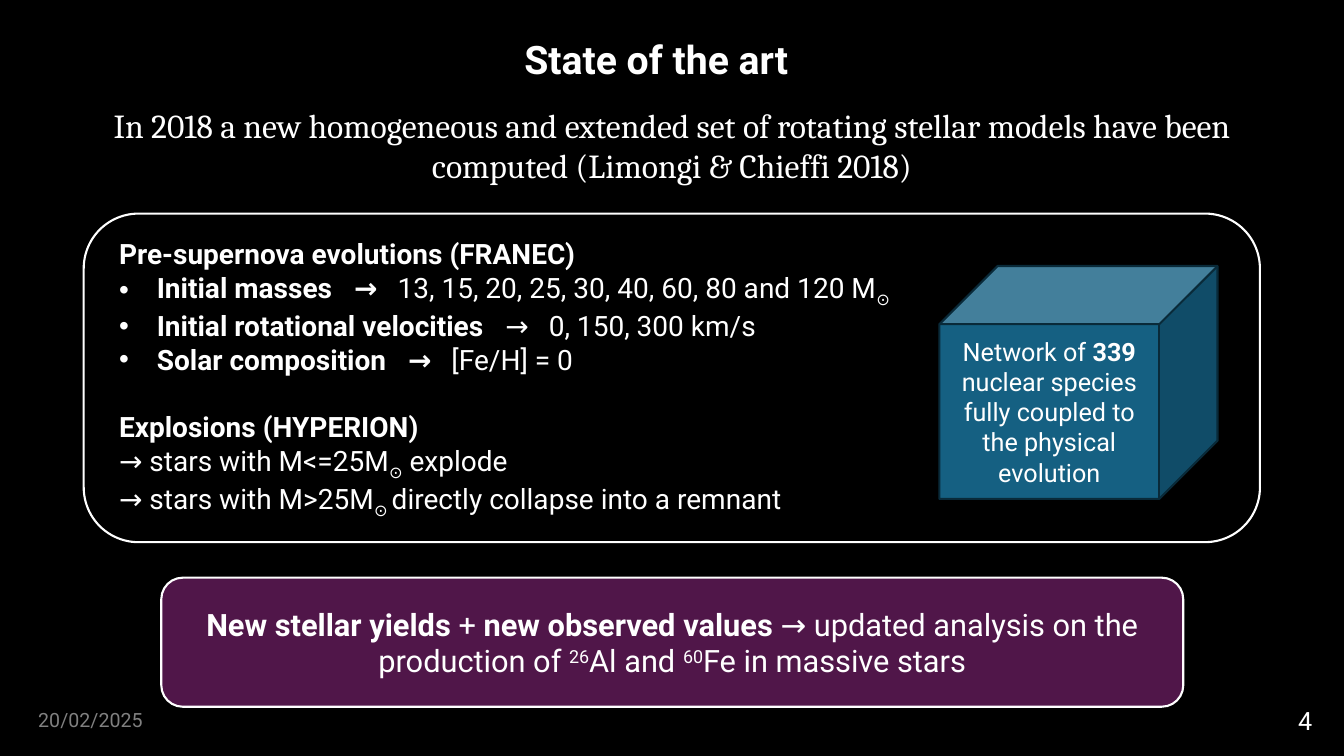
"""Build the slide on the state of the art in rotating stellar models."""
from lxml.etree import SubElement
from pptx import Presentation
from pptx.dml.color import RGBColor
from pptx.enum.shapes import MSO_SHAPE
from pptx.enum.text import MSO_ANCHOR, MSO_AUTO_SIZE, PP_ALIGN
from pptx.oxml.ns import qn
from pptx.util import Pt

WHITE, BLACK, GREY = "FFFFFF", "000000", "808080"
PURPLE, BLUE, NAVY = "501649", "156082", "092A39"
SANS, SERIF = "Roboto", "Cambria"
INDENT, ARROW, GAP = 27, 31, 24
BASE = {"sub": "-25000", "sup": "30000"}

TITLE = [[("State of the art", "b")]]
INTRO = [[("In 2018 a new homogeneous and extended set of rotating stellar models "
           "have been computed (Limongi & Chieffi 2018)", "")]]
DATE = [[("20/02/2025", "")]]
PAGE = [[("4", "")]]
MODELS = [
    [("Pre-supernova evolutions (FRANEC)", "b")],
    [("Initial masses\t→\t", "b"),
     ("13, 15, 20, 25, 30, 40, 60, 80 and 120 M", ""), ("⊙", "sub")],
    [("Initial rotational velocities\t", "b"), ("→\t0, 150, 300 km/s", "")],
    [("Solar composition\t→\t", "b"), ("[Fe/H] = 0", "")],
    [("Explosions (HYPERION)", "b")],
    [("→ stars with M<=25M", ""), ("⊙", "sub"), (" explode", "")],
    [("→ stars with M>25M", ""), ("⊙ ", "sub"),
     ("directly collapse into a remnant", "")],
]
TABS = {1: 168, 2: 276, 3: 206.5}
SPACE = {4: GAP}
YIELDS = [[("New stellar yields ", "b"), ("+ ", ""), ("new observed values ", "b"),
           ("→ updated analysis on the production of ", ""), ("26", "sup"),
           ("Al and ", ""), ("60", "sup"), ("Fe in massive stars", "")]]
NETWORK = [[("Network of ", ""), ("339 ", "b"),
            ("nuclear species fully coupled to the physical evolution", "")]]


def color(code):
    return RGBColor.from_string(code)


def place(shape, left, top, width, height):
    shape.left, shape.top = Pt(left), Pt(top)
    shape.width, shape.height = Pt(width), Pt(height)
    return shape


def bullet(para, stop):
    props = para._p.get_or_add_pPr()
    props.set("marL", str(Pt(INDENT if stop else 0)))
    props.set("indent", str(Pt(-INDENT if stop else 0)))
    if not stop:
        SubElement(props, qn("a:buNone"))
        return
    SubElement(props, qn("a:buFont"), typeface="Arial")
    SubElement(props, qn("a:buChar"), char="•")
    tabs = SubElement(props, qn("a:tabLst"))
    for spot in (stop, stop + ARROW):
        SubElement(tabs, qn("a:tab"), pos=str(Pt(spot)), algn="l")


def write(shape, lines, size, font=SANS, ink=WHITE, align=PP_ALIGN.CENTER,
          anchor=MSO_ANCHOR.TOP, tabs=None, space=None):
    frame = shape.text_frame
    frame.word_wrap = True
    frame.auto_size = MSO_AUTO_SIZE.NONE
    frame.vertical_anchor = anchor
    for row, runs in enumerate(lines):
        para = frame.add_paragraph() if row else frame.paragraphs[0]
        para.alignment = align
        para.space_before = Pt((space or {}).get(row, 0))
        bullet(para, (tabs or {}).get(row))
        for text, style in runs:
            run = para.add_run()
            run.text = text
            run.font.size, run.font.name = Pt(size), font
            run.font.bold = style == "b"
            run.font.color.rgb = color(ink)
            if style in BASE:
                run._r.get_or_add_rPr().set("baseline", BASE[style])


def block(slide, kind, box, line, fill=None):
    shape = place(slide.shapes.add_shape(kind, 0, 0, 0, 0), *box)
    shape.shadow.inherit = False
    shape.line.color.rgb = color(line)
    shape.line.width = Pt(1.5)
    if fill:
        shape.fill.solid()
        shape.fill.fore_color.rgb = color(fill)
    else:
        shape.fill.background()
    return shape


def label(slide, box, lines, size, **style):
    write(slide.shapes.add_textbox(*map(Pt, box)), lines, size, **style)


def main():
    deck = Presentation()
    deck.slide_width, deck.slide_height = Pt(960), Pt(540)
    slide = deck.slides.add_slide(deck.slide_layouts[1])
    slide.background.fill.solid()
    slide.background.fill.fore_color.rgb = color(BLACK)

    title, body = slide.placeholders
    write(place(title, 310.3, 21.6, 316.8, 41), TITLE, 28)
    write(place(body, 77.8, 165.6, 784, 254), MODELS, 20,
          align=PP_ALIGN.LEFT, tabs=TABS, space=SPACE)
    label(slide, (32.4, 71.3, 895, 94.3), INTRO, 24, font=SERIF)

    block(slide, MSO_SHAPE.ROUNDED_RECTANGLE, (59.8, 152.6, 840.2, 234.7), WHITE)
    panel = block(slide, MSO_SHAPE.ROUNDED_RECTANGLE,
                  (115.2, 412.6, 730, 92.2), WHITE, PURPLE)
    write(panel, YIELDS, 22, anchor=MSO_ANCHOR.MIDDLE)
    cube = block(slide, MSO_SHAPE.CUBE, (671, 190, 198.7, 166.3), NAVY, BLUE)
    write(cube, NETWORK, 18, anchor=MSO_ANCHOR.MIDDLE)

    label(slide, (920.2, 500.4, 39, 28.8), PAGE, 18, align=PP_ALIGN.LEFT)
    label(slide, (20.2, 501.8, 133.2, 24.5), DATE, 14, ink=GREY, align=PP_ALIGN.LEFT)
    deck.save("out.pptx")


if __name__ == "__main__":
    main()
